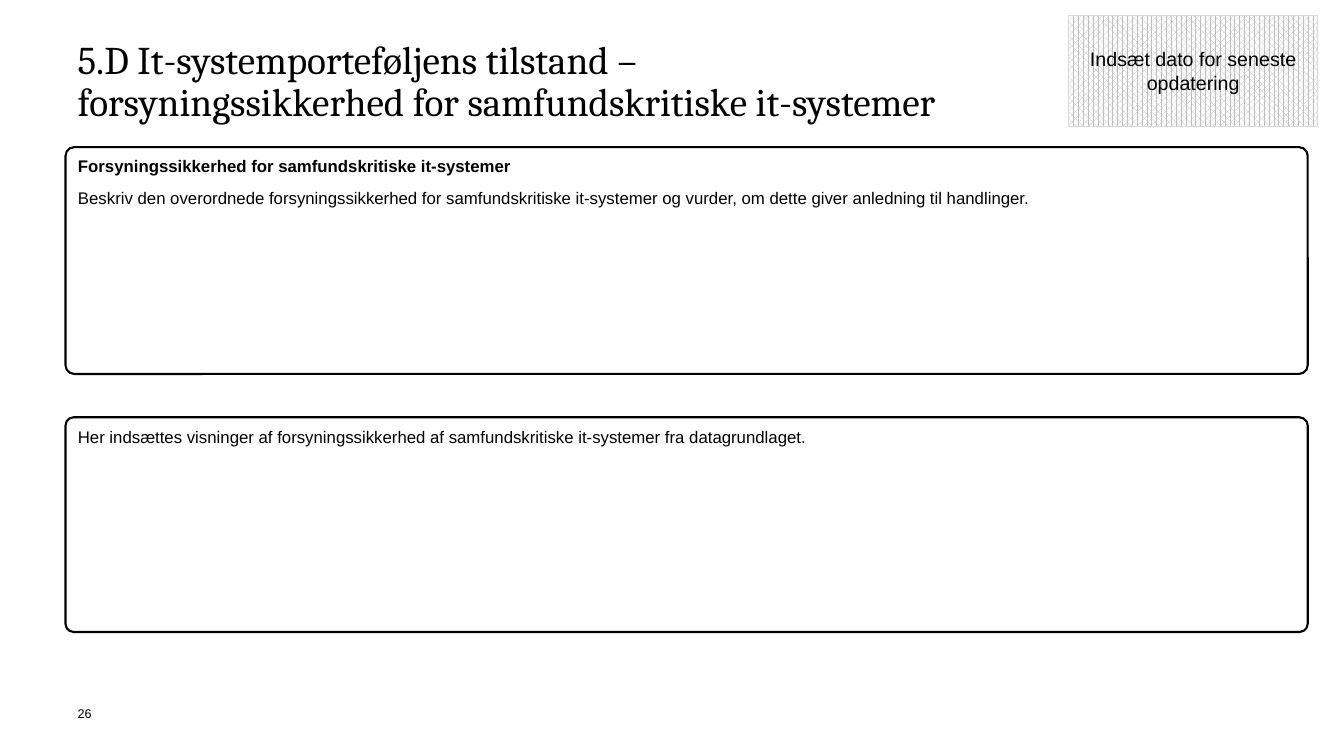
from dataclasses import dataclass

from pptx import Presentation
from pptx.dml.color import RGBColor
from pptx.enum.dml import MSO_PATTERN
from pptx.enum.shapes import MSO_SHAPE
from pptx.enum.text import MSO_ANCHOR as Anchor, MSO_AUTO_SIZE, PP_ALIGN as Align
from pptx.shapes.autoshape import Shape
from pptx.slide import Slide
from pptx.util import Inches, Pt

BLACK = RGBColor(0x00, 0x00, 0x00)
WHITE = RGBColor(0xFF, 0xFF, 0xFF)
PATTERN_GREY = RGBColor(0xBF, 0xBF, 0xBF)
BORDER_GREY = RGBColor(0xD9, 0xD9, 0xD9)

TITLE_FONT = "Cambria"
BODY_FONT = "Arial"
TEXT_LEFT = 0.77
PANEL_LEFT, PANEL_WIDTH = 0.65, 12.32
PANEL_CORNER = 0.038


@dataclass(frozen=True)
class Panel:
    top: float
    height: float
    body: str
    heading: str = ""


PANELS = [
    Panel(
        1.46, 2.25,
        "Beskriv den overordnede forsyningssikkerhed for samfundskritiske it-systemer "
        "og vurder, om dette giver anledning til handlinger.",
        heading="Forsyningssikkerhed for samfundskritiske it-systemer",
    ),
    Panel(
        4.14, 2.13,
        "Her indsættes visninger af forsyningssikkerhed af samfundskritiske "
        "it-systemer fra datagrundlaget.",
    ),
]


def set_frame(shape: Shape, *, anchor: Anchor = Anchor.TOP,
              side: float = 0.1, edge: float = 0.05) -> None:
    frame = shape.text_frame
    frame.word_wrap = True
    frame.auto_size = MSO_AUTO_SIZE.NONE
    frame.vertical_anchor = anchor
    frame.margin_left = frame.margin_right = Inches(side)
    frame.margin_top = frame.margin_bottom = Inches(edge)


def write(shape: Shape, text: str, *, size: float, font: str = BODY_FONT,
          bold: bool = False, align: Align = Align.LEFT,
          line_spacing: float = 1.0, space_before: float = 0) -> None:
    """Fill the empty first paragraph, or append a further one."""
    frame = shape.text_frame
    paragraph = frame.add_paragraph() if frame.text else frame.paragraphs[0]
    paragraph.text = text
    paragraph.alignment = align
    paragraph.line_spacing = line_spacing
    paragraph.space_before = Pt(space_before)
    for run in paragraph.runs:
        run.font.name = font
        run.font.size = Pt(size)
        run.font.bold = bold
        run.font.color.rgb = BLACK


def add_box(slide: Slide, kind: MSO_SHAPE, left: float, top: float, width: float,
            height: float, *, line: RGBColor, weight: float) -> Shape:
    shape = slide.shapes.add_shape(
        kind, Inches(left), Inches(top), Inches(width), Inches(height))
    shape.shadow.inherit = False
    shape.fill.background()
    shape.line.color.rgb = line
    shape.line.width = Pt(weight)
    return shape


def add_title(slide: Slide) -> None:
    title = slide.shapes.title
    title.left, title.top = Inches(TEXT_LEFT), Inches(0.4)
    title.width, title.height = Inches(11.8), Inches(1.02)
    set_frame(title, side=0, edge=0)
    write(title, "5.D It-systemporteføljens tilstand – \n"
          "forsyningssikkerhed for samfundskritiske it-systemer",
          size=28, font=TITLE_FONT, line_spacing=0.9)


def add_panel(slide: Slide, panel: Panel) -> None:
    shape = add_box(slide, MSO_SHAPE.ROUNDED_RECTANGLE, PANEL_LEFT, panel.top,
                    PANEL_WIDTH, panel.height, line=BLACK, weight=1.5)
    shape.adjustments[0] = PANEL_CORNER
    set_frame(shape)
    if panel.heading:
        write(shape, panel.heading, size=12, bold=True, line_spacing=1.08)
    write(shape, panel.body, size=12, line_spacing=1.08,
          space_before=7 if panel.heading else 0)


def add_date_box(slide: Slide) -> None:
    shape = add_box(slide, MSO_SHAPE.RECTANGLE, 10.6, 0.15, 2.47, 1.1,
                    line=BORDER_GREY, weight=0.5)
    shape.fill.patterned()
    shape.fill.pattern = MSO_PATTERN.PERCENT_70
    shape.fill.fore_color.rgb = PATTERN_GREY
    shape.fill.back_color.rgb = WHITE
    set_frame(shape, anchor=Anchor.MIDDLE)
    write(shape, "Indsæt dato for seneste opdatering", size=14, align=Align.CENTER)


def add_page_number(slide: Slide) -> None:
    shape = slide.shapes.add_textbox(
        Inches(TEXT_LEFT), Inches(7), Inches(0.31), Inches(0.3))
    set_frame(shape, side=0, edge=0)
    write(shape, "26", size=9)


def main() -> None:
    presentation = Presentation()
    presentation.slide_width, presentation.slide_height = Inches(13.33), Inches(7.5)
    title_only = presentation.slide_layouts.get_by_name("Title Only")
    slide = presentation.slides.add_slide(title_only)

    # Page number and title
    add_page_number(slide)
    add_title(slide)

    # Content panels
    for panel in PANELS:
        add_panel(slide, panel)

    # Date of the latest update
    add_date_box(slide)

    presentation.save("out.pptx")


if __name__ == "__main__":
    main()
